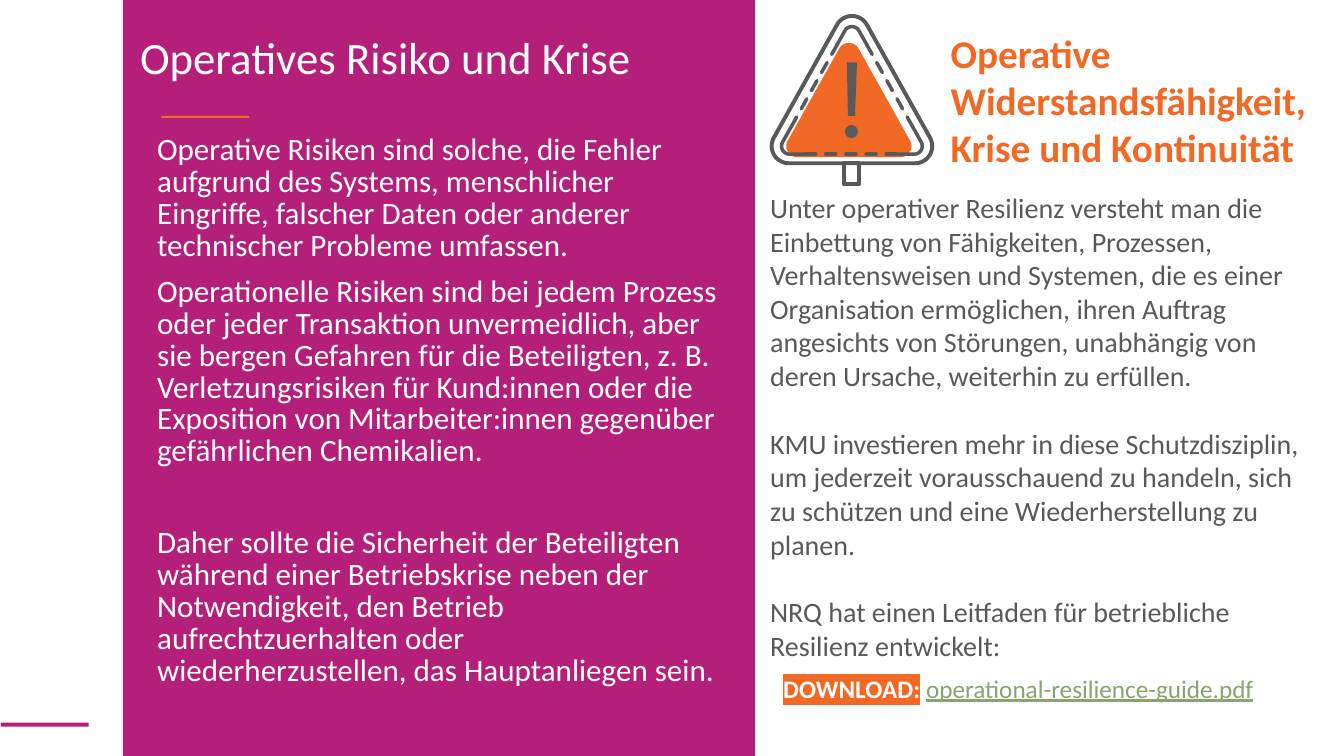
from math import atan2, cos, hypot, pi, sin, tan
from lxml.etree import SubElement
from pptx import Presentation
from pptx.dml.color import RGBColor
from pptx.enum.shapes import MSO_SHAPE
from pptx.enum.text import MSO_ANCHOR
from pptx.oxml.ns import qn
from pptx.util import Inches, Pt

PURPLE = RGBColor(0xB4, 0x1F, 0x7A)
ORANGE = RGBColor(0xF1, 0x69, 0x24)
GREY = RGBColor(0x59, 0x59, 0x59)
GREEN = RGBColor(0x87, 0xA6, 0x6E)
WHITE = RGBColor(0xFF, 0xFF, 0xFF)

MID = 8.45
SLOPE = 1.79
RING_TOP, RING_BASE, RING_BEND = 0.18, 1.53, 0.08

RISKS = [
    "Operative Risiken sind solche, die Fehler aufgrund des Systems, menschlicher Eingriffe, "
    "falscher Daten oder anderer technischer Probleme umfassen.",
    "Operationelle Risiken sind bei jedem Prozess oder jeder Transaktion unvermeidlich, aber sie "
    "bergen Gefahren für die Beteiligten, z. B. Verletzungsrisiken für Kund:innen oder die "
    "Exposition von Mitarbeiter:innen gegenüber gefährlichen Chemikalien.",
    "Daher sollte die Sicherheit der Beteiligten während einer Betriebskrise neben der "
    "Notwendigkeit, den Betrieb aufrechtzuerhalten oder wiederherzustellen, das Hauptanliegen sein.",
]
GUIDE = [
    "Unter operativer Resilienz versteht man die Einbettung von Fähigkeiten, Prozessen, "
    "Verhaltensweisen und Systemen, die es einer Organisation ermöglichen, ihren Auftrag angesichts "
    "von Störungen, unabhängig von deren Ursache, weiterhin zu erfüllen.",
    "KMU investieren mehr in diese Schutzdisziplin, um jederzeit vorausschauend zu handeln, sich zu "
    "schützen und eine Wiederherstellung zu planen.",
    "NRQ hat einen Leitfaden für betriebliche Resilienz entwickelt:",
]
LINK = [
    ("DOWNLOAD:", {"color": WHITE, "bold": True, "mark": ORANGE}),
    (" ", {}),
    ("operational-resilience-guide.pdf", {"color": GREEN, "under": True}),
]


def add_run(para, words, size, color, bold=False, under=False, mark=None):
    run = para.add_run()
    run.text = words
    font = run.font
    font.size, font.bold, font.underline = Pt(size), bold, under
    font.color.rgb = color
    if mark is not None:
        light = SubElement(run._r.get_or_add_rPr(), qn("a:highlight"))
        SubElement(light, qn("a:srgbClr")).set("val", str(mark))
    font.name = "Calibri"


def add_text(slide, box, paras, gaps=(), lead=None, anchor=MSO_ANCHOR.TOP, **style):
    frame = slide.shapes.add_textbox(*map(Inches, box)).text_frame
    frame.word_wrap = True
    frame.vertical_anchor = anchor
    for i, runs in enumerate(paras):
        para = frame.paragraphs[0] if i == 0 else frame.add_paragraph()
        if i:
            para.space_before = Pt(gaps[i - 1])
        if lead:
            para.line_spacing = lead
        for words, own in [(runs, {})] if isinstance(runs, str) else runs:
            add_run(para, words, **{**style, **own})


def paint(shape, fill=None, line=None, width=0):
    shape.shadow.inherit = False
    if fill is None:
        shape.fill.background()
    else:
        shape.fill.solid()
        shape.fill.fore_color.rgb = fill
    if line is None:
        shape.line.fill.background()
    else:
        shape.line.color.rgb = line
        shape.line.width = Pt(width)
        shape.line._get_or_add_ln().set("cap", "rnd")


def add_form(slide, kind, box, **look):
    paint(slide.shapes.add_shape(kind, *map(Inches, box)), **look)


def add_path(slide, *parts, close=True, **look):
    spots = [[(Inches(x), Inches(y)) for x, y in part] for part in parts]
    form = slide.shapes.build_freeform(*spots[0][0])
    for i, part in enumerate(spots):
        if i:
            form.move_to(*part[0])
        form.add_line_segments(part[1:], close=close)
    paint(form.convert_to_shape(), **look)


def bend(prev, tip, after, radius, steps=12):
    ways = []
    for x, y in (prev, after):
        dx, dy = x - tip[0], y - tip[1]
        ways.append((dx / hypot(dx, dy), dy / hypot(dx, dy)))
    (ux, uy), (wx, wy) = ways
    sx, sy = ux + wx, uy + wy
    half = atan2(abs(ux * wy - uy * wx), 1 + ux * wx + uy * wy)
    reach = radius / sin(half) / hypot(sx, sy)
    cx, cy = tip[0] + sx * reach, tip[1] + sy * reach
    leg = radius / tan(half)
    first, last = [atan2(tip[1] + y * leg - cy, tip[0] + x * leg - cx) for x, y in ways]
    turn = (last - first + pi) % (2 * pi) - pi
    angles = [first + turn * i / steps for i in range(steps + 1)]
    return [(cx + radius * cos(a), cy + radius * sin(a)) for a in angles]


def corners(mid, top, base, radius):
    half = (base - top) / SLOPE
    tips = [(mid, top), (mid + half, base), (mid - half, base)]
    return [bend(tips[i - 1], tips[i], tips[(i + 1) % 3], radius) for i in range(3)]


def on_side(sign, y):
    return MID + sign * (y - RING_TOP) / SLOPE, y


def add_ring(slide):
    apex, right, left = corners(MID, RING_TOP, RING_BASE, RING_BEND)
    curves = [
        [on_side(-1, 0.45), *apex, on_side(1, 0.45)],
        [on_side(1, 1.26), *right, (8.91, RING_BASE)],
        [(7.99, RING_BASE), *left, on_side(-1, 1.26)],
    ]
    pen = {"close": False, "line": GREY, "width": 2.5}
    for curve in curves:
        add_path(slide, curve, **pen)
    for sign in (1, -1):
        dashes = [[on_side(sign, 0.49 + 0.18 * i + d) for d in (-0.05, 0.05)]
                  for i in range(5)]
        add_path(slide, *dashes, **pen)
    floor = [[(8.04 + 0.2 * i + d, RING_BASE) for d in (-0.05, 0.05)] for i in range(5)]
    add_path(slide, *floor, **pen)


def add_sign(slide):
    add_path(slide, sum(corners(8.42, 0.31, 1.56, 0.11), []), fill=ORANGE)
    add_ring(slide)
    add_path(slide, sum(corners(MID, -0.02, 1.62, 0.17), []), line=GREY, width=2.8)
    add_form(slide, MSO_SHAPE.OVAL, (8.38, 1.24, 0.13, 0.13), fill=GREY)
    add_path(slide, [(8.4, 0.62), (8.5, 0.62), (8.48, 1.15), (8.41, 1.15)], fill=GREY)
    add_form(slide, MSO_SHAPE.RECTANGLE, (8.37, 1.62, 0.15, 0.21), line=GREY, width=2.8)


def main():
    deck = Presentation()
    deck.slide_width, deck.slide_height = Inches(13.33), Inches(7.5)
    slide = deck.slides.add_slide(deck.slide_layouts[6])
    add_form(slide, MSO_SHAPE.RECTANGLE, (1.22, 0, 6.27, 7.5), fill=PURPLE)
    add_form(slide, MSO_SHAPE.RECTANGLE, (0.01, 7.17, 0.87, 0.04), fill=PURPLE)
    add_text(slide, (7.54, 1.84, 5.67, 5.15), GUIDE, gaps=(24.4, 24.4), size=20, color=GREY)
    add_text(slide, (7.67, 6.53, 5.4, 0.59), [LINK], anchor=MSO_ANCHOR.MIDDLE,
             size=18, color=WHITE)
    add_text(slide, (1.46, 1.29, 5.79, 5.83), RISKS, gaps=(10, 42.8), lead=Pt(22.8),
             size=22.2, color=WHITE)
    add_text(slide, (1.29, 0.31, 6.92, 0.67), ["Operatives Risiko und Krise"], lead=0.9,
             size=32, color=WHITE)
    add_text(slide, (9.33, 0.24, 3.94, 1.84),
             ["Operative Widerstandsfähigkeit, Krise und Kontinuität"],
             size=28, color=ORANGE, bold=True)
    add_form(slide, MSO_SHAPE.RECTANGLE, (1.6, 1.15, 0.87, 0.02), fill=ORANGE)
    add_sign(slide)
    deck.save("out.pptx")


if __name__ == "__main__":
    main()
